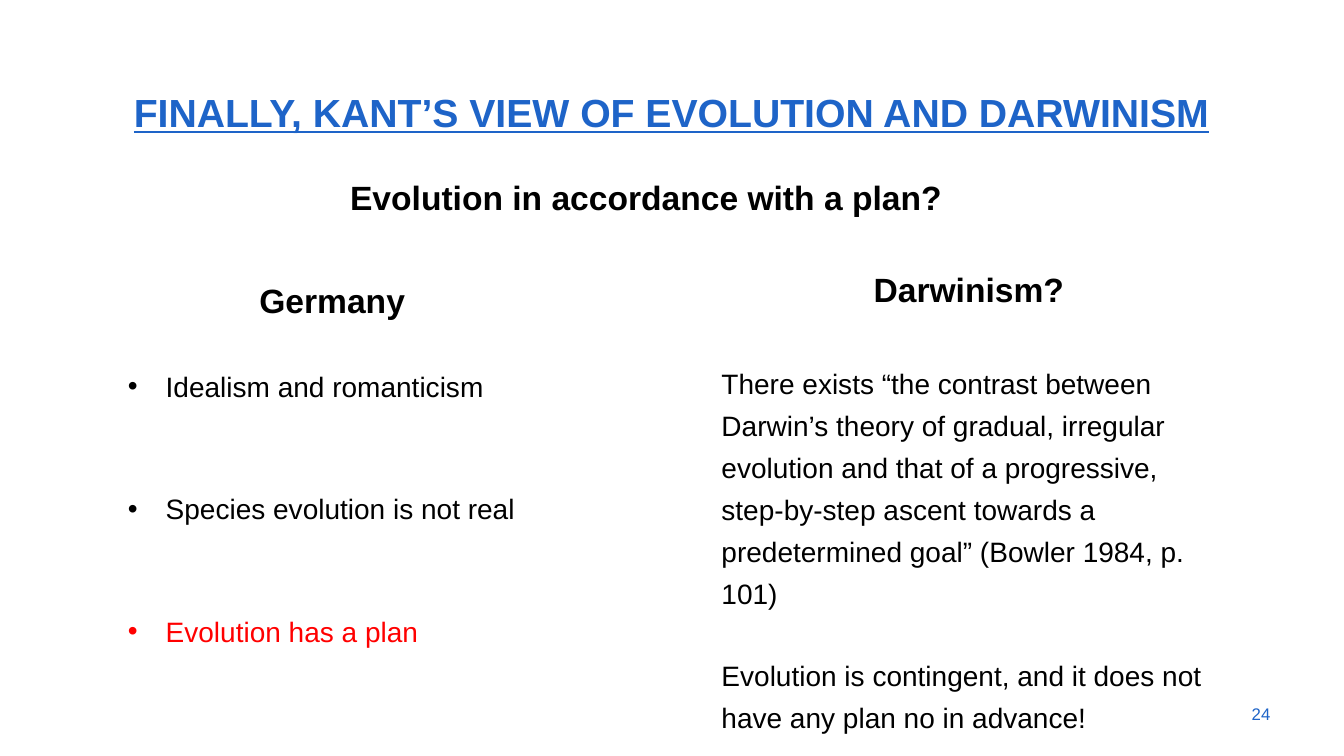
from dataclasses import dataclass

from lxml.etree import SubElement
from pptx import Presentation
from pptx.dml.color import RGBColor
from pptx.enum.shapes import MSO_SHAPE
from pptx.enum.text import MSO_ANCHOR, PP_ALIGN
from pptx.oxml.ns import qn
from pptx.util import Pt


@dataclass(frozen=True)
class Theme:
    font: str = "Arial"
    blue: str = "1E64C8"
    black: str = "000000"
    red: str = "FF0000"
    white: str = "FFFFFF"
    title: int = 28
    head: int = 24
    body: int = 20
    small: int = 12
    line: float = 1.25


THEME = Theme()
ROW = THEME.body * 1.15 * THEME.line


def write(frame, text, size=THEME.body, color=THEME.black, bold=False,
          under=False, align=PP_ALIGN.LEFT, line=THEME.line, before=0, bullet=False):
    para = frame.paragraphs[0]
    if para.runs:
        para = frame.add_paragraph()
    para.alignment = align
    para.line_spacing = line
    para.space_before = Pt(before)
    if bullet:
        props = para._p.get_or_add_pPr()
        props.set("marL", str(Pt(27)))
        props.set("indent", str(Pt(-27)))
        SubElement(props, qn("a:buFont"), typeface=THEME.font)
        SubElement(props, qn("a:buChar"), char="•")
    run = para.add_run()
    run.text = text
    font = run.font
    font.name = THEME.font
    font.size = Pt(size)
    font.bold = bold
    font.underline = under
    font.color.rgb = RGBColor.from_string(color)


def label(slide, box, text, anchor=MSO_ANCHOR.TOP, wrap=True, **style):
    frame = slide.shapes.add_textbox(*map(Pt, box)).text_frame
    frame.word_wrap = wrap
    frame.vertical_anchor = anchor
    write(frame, text, **style)


def panel(slide, box, head, items):
    shape = slide.shapes.add_shape(MSO_SHAPE.RECTANGLE, *map(Pt, box))
    shape.shadow.inherit = False
    shape.fill.background()
    shape.line.color.rgb = RGBColor.from_string(THEME.white)
    shape.line.width = Pt(0.75)
    frame = shape.text_frame
    frame.word_wrap = True
    frame.vertical_anchor = MSO_ANCHOR.TOP
    write(frame, head, size=THEME.head, bold=True, align=PP_ALIGN.CENTER)
    for text, style in items:
        write(frame, text, **style)


def header(slide, box):
    left, top, width, height = box
    label(slide, (left, top, width, 47.5),
          "FINALLY, KANT’S VIEW OF EVOLUTION AND DARWINISM",
          anchor=MSO_ANCHOR.BOTTOM, size=THEME.title, color=THEME.blue,
          bold=True, under=True, align=PP_ALIGN.CENTER, line=0.9)
    label(slide, (left + 198.5, top + 62, 440.5, height - 62),
          "Evolution in accordance with a plan?",
          wrap=False, size=THEME.head, bold=True)


def body(slide, box):
    left, top, width, height = box
    panel(slide, (left, top + 8, 306, 272), "Germany", [
        ("Idealism and romanticism", dict(before=ROW, bullet=True)),
        ("Species evolution is not real", dict(before=2 * ROW, bullet=True)),
        ("Evolution has a plan",
         dict(before=2 * ROW, bullet=True, color=THEME.red)),
    ])
    wide = 367.5
    panel(slide, (left + width - wide, top, wide, height), "Darwinism?", [
        ("There exists “the contrast between Darwin’s theory of gradual, "
         "irregular evolution and that of a progressive, step-by-step ascent "
         "towards a predetermined goal” (Bowler 1984, p. 101)",
         dict(before=ROW * THEME.head / THEME.body)),
        ("Evolution is contingent, and it does not have any plan no in advance!",
         dict(before=ROW)),
    ])


def footer(slide, box):
    label(slide, box, "24", anchor=MSO_ANCHOR.MIDDLE, size=THEME.small,
          color=THEME.blue, align=PP_ALIGN.RIGHT, line=1)


def main():
    deck = Presentation()
    deck.slide_width, deck.slide_height = Pt(960), Pt(540)
    slide = deck.slides.add_slide(deck.slide_layouts[6])
    header(slide, (44.5, 53.5, 870, 101))
    body(slide, (84.25, 181.5, 791.5, 336))
    footer(slide, (863.5, 495.5, 51, 28.5))
    deck.save("out.pptx")


if __name__ == "__main__":
    main()
